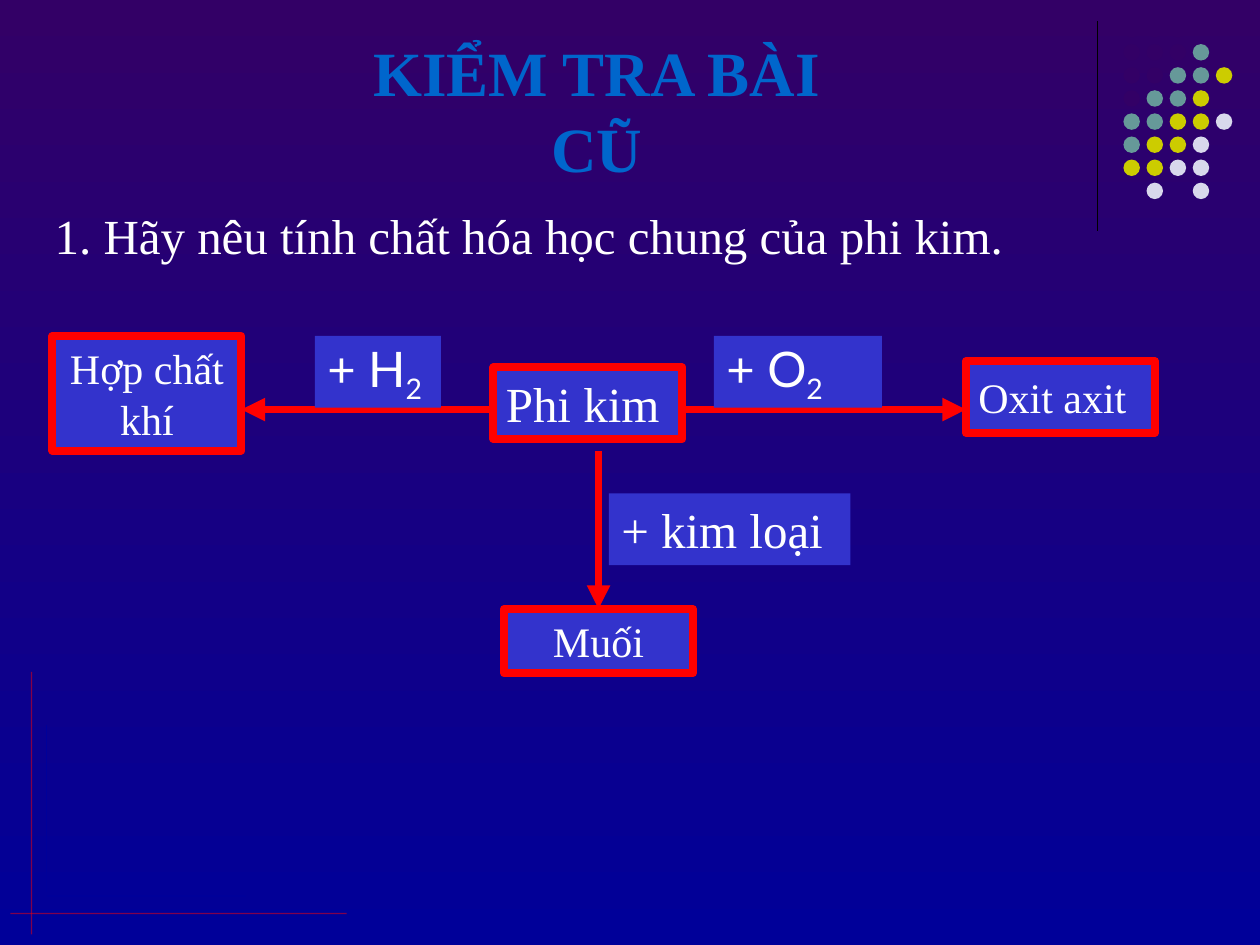
from lxml.etree import SubElement
from pptx import Presentation
from pptx.dml.color import RGBColor
from pptx.enum.shapes import MSO_CONNECTOR as Connector, MSO_SHAPE as Shape
from pptx.enum.text import MSO_ANCHOR as Anchor, MSO_AUTO_SIZE as AutoSize, PP_ALIGN as Align
from pptx.oxml.ns import qn
from pptx.util import Pt

SERIF = "Times New Roman"
SANS = "Lato"
RED = "FF0000"
BLUE = "3333CC"
WHITE = "FFFFFF"
DOT_COLORS = {"P": "330066", "T": "669999", "Y": "CCCC00", "W": "D8D8EC"}
DOT_ROWS = ["PPP", "PPPT", "PPTTY", "PTTY", "TTYYW", "TYYW", "YYWW", " W W"]


def color(hex_code):
    """Turn a hex string into a colour."""
    return RGBColor.from_string(hex_code)


def write(shape, text, size=28, font=SERIF, ink=WHITE, align=Align.LEFT,
          bold=False, subscript="", wrap=True):
    """Write one formatted paragraph, with an optional subscript, into a shape."""
    frame = shape.text_frame
    frame.auto_size = AutoSize.NONE
    frame.word_wrap = wrap
    frame.vertical_anchor = Anchor.MIDDLE
    para = frame.paragraphs[0]
    para.alignment = align
    para.space_before = Pt(0)
    for part in filter(None, (text, subscript)):
        span = para.add_run()
        span.text = part
        span.font.size = Pt(size)
        span.font.name = font
        span.font.bold = bold
        span.font.color.rgb = color(ink)
    if subscript:
        span.font._element.set("baseline", "-25000")
    return para


def place(shape, left, top, width, height):
    """Move a shape to a box given in points."""
    shape.left, shape.top = Pt(left), Pt(top)
    shape.width, shape.height = Pt(width), Pt(height)


def add_block(page, left, top, width, height, fill, kind=Shape.RECTANGLE, border=None):
    """Add a filled shape, with a thick border if a colour is given."""
    block = page.shapes.add_shape(kind, Pt(left), Pt(top), Pt(width), Pt(height))
    block.shadow.inherit = False
    block.fill.solid()
    block.fill.fore_color.rgb = color(fill)
    if border:
        block.line.color.rgb = color(border)
        block.line.width = Pt(4.5)
    else:
        block.line.fill.background()
    return block


def add_line(page, start, end, ink, width=0.75, arrow=False, alpha=None):
    """Add a straight line, optionally with an arrowhead or transparency."""
    line = page.shapes.add_connector(Connector.STRAIGHT, *map(Pt, start + end))
    line.line.color.rgb = color(ink)
    line.line.width = Pt(width)
    properties = line._element.spPr
    if alpha:
        tint = properties.find(".//" + qn("a:srgbClr"))
        SubElement(tint, qn("a:alpha"), val=str(alpha * 1000))
    if arrow:
        SubElement(properties.find(qn("a:ln")), qn("a:tailEnd"), type="triangle")
    SubElement(properties, qn("a:effectLst"))
    return line


def paint_background(page):
    """Fill the page with a vertical gradient."""
    fill = page.background.fill
    fill.gradient()
    fill.gradient_angle = 270
    for stop, hex_code in zip(fill.gradient_stops, ("330066", "000099")):
        stop.color.rgb = color(hex_code)


def add_dots(page, left, top, pitch=13.2, size=9.4):
    """Lay out the corner dots on a square grid."""
    for row, codes in enumerate(DOT_ROWS):
        for column, code in enumerate(codes):
            if code in DOT_COLORS:
                add_block(page, left + column * pitch, top + row * pitch,
                          size, size, DOT_COLORS[code], kind=Shape.OVAL)


def add_corner_lines(page, left, top, width, height):
    """Draw the crossing lines in the bottom left corner."""
    right, bottom = left + width, top + height
    add_line(page, (left, bottom - 12), (right, bottom - 12), RED, alpha=50)
    add_line(page, (left + 12, top), (left + 12, bottom), RED, alpha=50)
    add_line(page, (left + 20.6, top + 30), (left + 20.6, bottom - 24), "000099")
    add_line(page, (left + 20.6, bottom - 22), (left + 134.4, bottom - 22), "000099")


def add_headings(page, left, top, width):
    """Place the title and the question in their placeholders."""
    title, question = page.placeholders
    place(title, left + 156, top, 322, 41)
    write(title, "KIỂM TRA BÀI CŨ", size=36, ink="0066CC", bold=True,
          align=Align.CENTER, wrap=False)
    place(question, left, top + 72, width, 41)
    para = write(question, "1. Hãy nêu tính chất hóa học chung của phi kim.",
                 align=Align.JUSTIFY)
    properties = para._p.get_or_add_pPr()
    properties.set("marL", "0")
    properties.set("indent", "0")
    SubElement(properties, qn("a:buNone"))


def add_diagram(page, left, top):
    """Draw the reactions of nonmetals around the central box."""
    def add_node(x, y, height, text, **style):
        node = add_block(page, left + x, top + y, 108, height, BLUE, border=RED)
        write(node, text, **style)
        return node

    add_node(252, 18, 41, "Phi kim")
    add_node(522, 14.4, 41, "Oxit axit", size=24)
    add_node(0, 0, 65.5, "Hợp chất khí", size=24, align=Align.CENTER)
    salt = add_node(258, 156, 36.7, "Muối", size=24, align=Align.CENTER)

    level = top + 42
    add_line(page, (left + 360, level), (left + 522, level), RED, 4.5, arrow=True)
    add_line(page, (left + 252, level), (left + 108, level), RED, 4.5, arrow=True)
    down = add_line(page, (left + 312, top + 66), (left + 312, top + 156),
                    RED, 4.5, arrow=True)
    down.end_connect(salt, 0)

    labels = [
        (378, 0, 96, "+ O", SANS, "2"),
        (150, 0, 72, "+ H", SANS, "2"),
        (318, 90, 138, "+ kim loại", SERIF, ""),
    ]
    for x, y, width, text, font, subscript in labels:
        label = add_block(page, left + x, top + y, width, 41, BLUE)
        write(label, text, font=font, subscript=subscript)


def main():
    """Build and save the slide."""
    deck = Presentation()
    deck.slide_width, deck.slide_height = Pt(720), Pt(540)
    page = deck.slides.add_slide(deck.slide_layouts[1])
    paint_background(page)
    add_line(page, (627, 12), (627, 132), "000000")
    add_dots(page, 642, 12)
    add_corner_lines(page, 6, 384, 192, 150)
    add_diagram(page, 30, 192)
    add_headings(page, 24, 42, 588)
    deck.save("out.pptx")


if __name__ == "__main__":
    main()
